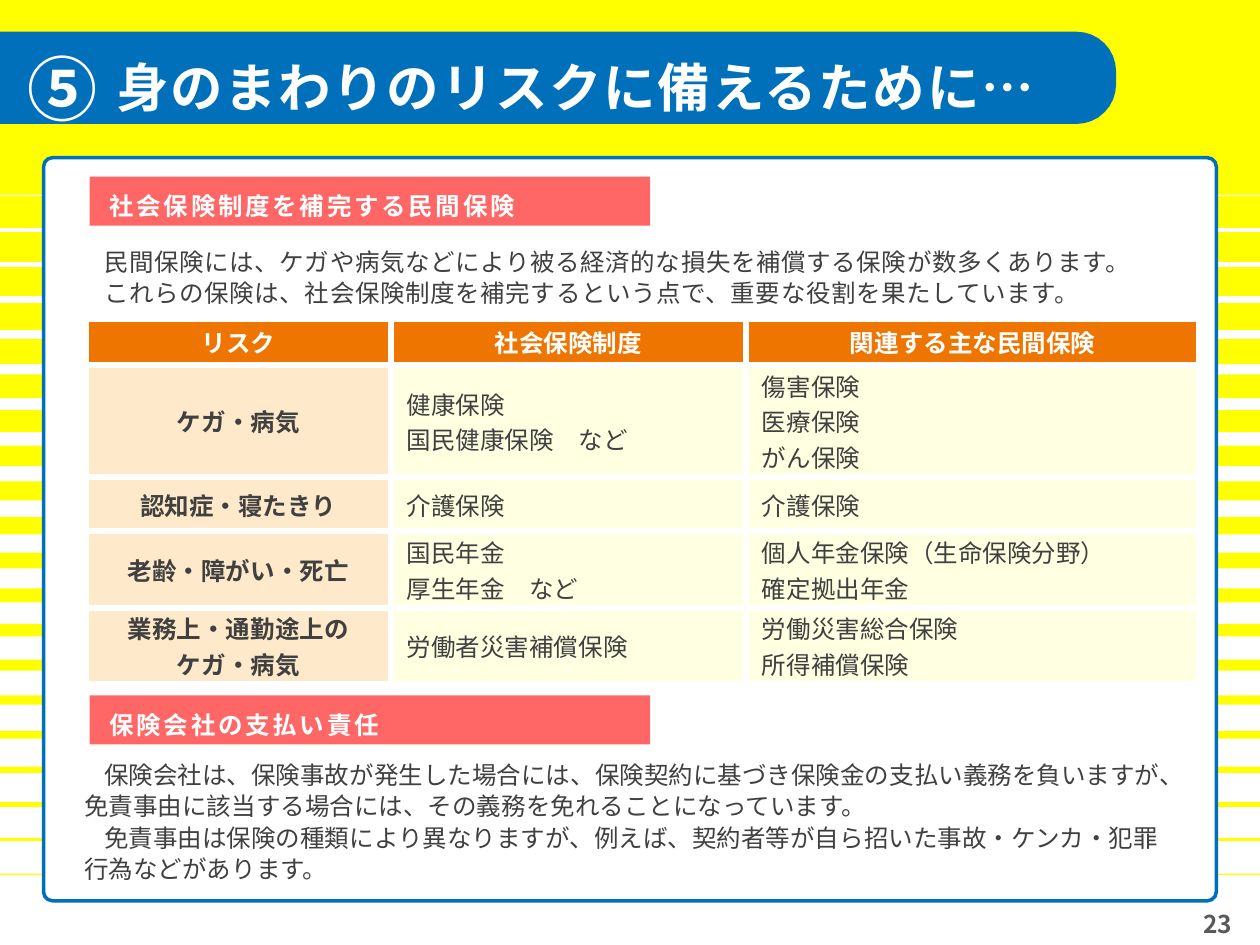
from dataclasses import dataclass
from math import cos, pi, sin

from pptx import Presentation
from pptx.dml.color import RGBColor
from pptx.enum.shapes import MSO_CONNECTOR, MSO_SHAPE
from pptx.enum.text import MSO_ANCHOR, MSO_AUTO_SIZE, PP_ALIGN
from pptx.oxml.xmlchemy import OxmlElement
from pptx.util import Cm, Pt

RECT, ROUND = MSO_SHAPE.RECTANGLE, MSO_SHAPE.ROUNDED_RECTANGLE
LINE = MSO_CONNECTOR.STRAIGHT
LEFT, MID = PP_ALIGN.LEFT, PP_ALIGN.CENTER
TOP, CENTER = MSO_ANCHOR.TOP, MSO_ANCHOR.MIDDLE
FIXED = MSO_AUTO_SIZE.NONE


@dataclass(frozen=True)
class Theme:
    font: str = "Noto Sans CJK JP"
    yellow: str = "FFFF00"
    white: str = "FFFFFF"
    blue: str = "0070BB"
    red: str = "FF0000"
    orange: str = "EE7500"
    peach: str = "FEE9CA"
    cream: str = "FFFFE1"
    ink: str = "404040"
    gray: str = "595959"
    body: int = 14
    title: int = 30
    badge: int = 40


THEME = Theme()
W, H = 25.4, 19.05
HEAD = ["リスク", "社会保険制度", "関連する主な民間保険"]
ROWS = [
    ["ケガ・病気", "健康保険\n国民健康保険　など", "傷害保険\n医療保険\nがん保険"],
    ["認知症・寝たきり", "介護保険", "介護保険"],
    ["老齢・障がい・死亡", "国民年金\n厚生年金　など", "個人年金保険（生命保険分野）\n確定拠出年金"],
    ["業務上・通勤途上の\nケガ・病気", "労働者災害補償保険", "労働災害総合保険\n所得補償保険"],
]
COLS = [6.15, 7.16, 9.14]
HEIGHTS = [0.94, 2.01, 1.09, 1.5, 1.5]
INTRO = (
    "民間保険には、ケガや病気などにより被る経済的な損失を補償する保険が数多くあります。\n"
    "これらの保険は、社会保険制度を補完するという点で、重要な役割を果たしています。"
)
DUTY = (
    "保険会社は、保険事故が発生した場合には、保険契約に基づき保険金の支払い義務を負いますが、"
    "免責事由に該当する場合には、その義務を免れることになっています。\n"
    "免責事由は保険の種類により異なりますが、例えば、契約者等が自ら招いた事故・ケンカ・犯罪"
    "行為などがあります。"
)


def tint(name):
    return RGBColor.from_string(name)


def write(frame, text, size=THEME.body, color=THEME.ink, bold=False,
          align=LEFT, track=0, lead=None, indent=0):
    for i, line in enumerate(text.split("\n")):
        para = frame.paragraphs[0] if i == 0 else frame.add_paragraph()
        para.alignment = align
        if lead:
            para.line_spacing = Pt(lead)
        if indent:
            para._p.get_or_add_pPr().set("indent", str(Cm(indent)))
        run = para.add_run()
        run.text = line
        run.font.name = THEME.font
        run.font.size = Pt(size)
        run.font.bold = bold
        run.font.color.rgb = tint(color)
        props = run._r.get_or_add_rPr()
        props.set("spc", str(round(track * 100)))
        east = OxmlElement("a:ea")
        east.set("typeface", THEME.font)
        props.append(east)


def setup(frame, left=0.25, top=0.13, right=0.25, base=0.13, anchor=TOP):
    frame.word_wrap = True
    frame.auto_size = FIXED
    frame.margin_left, frame.margin_top = Cm(left), Cm(top)
    frame.margin_right, frame.margin_bottom = Cm(right), Cm(base)
    frame.vertical_anchor = anchor
    return frame


def label(slide, box, text, pad=None, **style):
    shape = slide.shapes.add_textbox(*map(Cm, box))
    write(setup(shape.text_frame, **(pad or {})), text, **style)


def paint(shape, color):
    shape.shadow.inherit = False
    shape.fill.solid()
    shape.fill.fore_color.rgb = tint(color)
    shape.line.fill.background()
    return shape


def block(slide, box, color, kind=RECT):
    return paint(slide.shapes.add_shape(kind, *map(Cm, box)), color)


def stripes(slide, box):
    x, y, w, h = box
    block(slide, (x, y, w, 6.65), THEME.yellow)
    last = 15
    for i in range(last + 1):
        block(slide, (x, y + 6.83 + 10.78 * i / last, w, 0.51 - 0.48 * i / last),
              THEME.yellow)
    for i in range(4):
        level = Cm(y + 3.94 + 0.7 * i)
        rule = slide.shapes.add_connector(LINE, Cm(x), level, Cm(x + w), level)
        rule.line.color.rgb = tint(THEME.white)
        rule.line.width = Pt(1 + 0.93 * i)
        rule._element.spPr.append(OxmlElement("a:effectLst"))


def panel(slide, box):
    frame = block(slide, box, THEME.white, ROUND)
    frame.adjustments[0] = 0.012
    frame.line.color.rgb = tint(THEME.blue)
    frame.line.width = Pt(2)


def section(slide, box, head, text, drop, track=0):
    x, y, w, h = box
    bar = block(slide, (x + 0.36, y, 11.3, 0.99), THEME.red)
    alpha = OxmlElement("a:alpha")
    alpha.set("val", "60000")
    bar._element.spPr.find(".//{*}srgbClr").append(alpha)
    write(setup(bar.text_frame, left=0.4, top=0.18, base=0, anchor=CENTER),
          head, color=THEME.white, bold=True, track=1.5)
    label(slide, (x, y + drop, w, h - drop), text, lead=18, indent=0.4, track=track)


def border(cell):
    props = cell._tc.get_or_add_tcPr()
    for side in ("lnL", "lnR", "lnT", "lnB"):
        edge = OxmlElement("a:" + side)
        edge.set("w", str(Pt(4)))
        fill, color = OxmlElement("a:solidFill"), OxmlElement("a:srgbClr")
        color.set("val", THEME.white)
        fill.append(color)
        edge.append(fill)
        props.append(edge)


def grid(slide, box):
    table = slide.shapes.add_table(len(HEIGHTS), len(COLS), *map(Cm, box)).table
    table.horz_banding = False
    for col, width in zip(table.columns, COLS):
        col.width = Cm(width)
    for r, (height, texts) in enumerate(zip(HEIGHTS, [HEAD] + ROWS)):
        table.rows[r].height = Cm(height)
        for c, text in enumerate(texts):
            cell = table.cell(r, c)
            border(cell)
            cell.fill.solid()
            cell.fill.fore_color.rgb = tint(
                THEME.orange if r == 0 else THEME.peach if c == 0 else THEME.cream)
            cell.margin_left = cell.margin_right = Cm(0.32)
            cell.margin_top = cell.margin_bottom = Cm(0.05)
            cell.vertical_anchor = CENTER
            key = r == 0 or c == 0
            write(cell.text_frame, text, bold=key, align=MID if key else LEFT,
                  color=THEME.white if r == 0 else THEME.ink)


def banner(slide, box):
    x, y, w, h = box
    bend = 0.8
    turns = [i * pi / 16 for i in range(9)]
    upper = [(x + w - bend + bend * sin(t), y + bend - bend * cos(t)) for t in turns]
    lower = [(px, 2 * y + h - py) for px, py in reversed(upper)]
    points = [(Cm(px), Cm(py)) for px, py in upper + lower + [(x, y + h)]]
    build = slide.shapes.build_freeform(Cm(x), Cm(y))
    build.add_line_segments(points, close=True)
    paint(build.convert_to_shape(), THEME.blue)

    pad = dict(left=0, top=0.03, right=0, base=0)
    title = slide.shapes.title
    title.left, title.top = Cm(x + 2.34), Cm(y + 0.43)
    title.width, title.height = Cm(20.19), Cm(1.32)
    write(setup(title.text_frame, **pad), "身のまわりのリスクに備えるために…",
          size=THEME.title, color=THEME.white, bold=True, track=1)
    slide.shapes._spTree.append(title._element)
    label(slide, (x + 0.2, y + 0.25, 2.11, 1.75), "⑤", pad=pad,
          size=THEME.badge, color=THEME.white, bold=True, align=MID)


def main():
    deck = Presentation()
    deck.slide_width, deck.slide_height = Cm(W), Cm(H)
    slide = deck.slides.add_slide(deck.slide_layouts[5])
    stripes(slide, (0, 0, W, H))
    label(slide, (23.7, 18.19, 1.7, 0.86), "23", color=THEME.gray, bold=True, align=MID)
    panel(slide, (0.88, 3.18, 23.64, 14.98))
    section(slide, (1.45, 3.56, 22.5, 2.8), "社会保険制度を補完する民間保険",
            INTRO, drop=1.24, track=0.3)
    grid(slide, (1.73, 6.42, sum(COLS), sum(HEIGHTS)))
    section(slide, (1.45, 14.02, 22.5, 3.94), "保険会社の支払い責任", DUTY, drop=1.12)
    banner(slide, (0, 0.64, 22.5, 1.86))
    deck.save("out.pptx")


if __name__ == "__main__":
    main()
